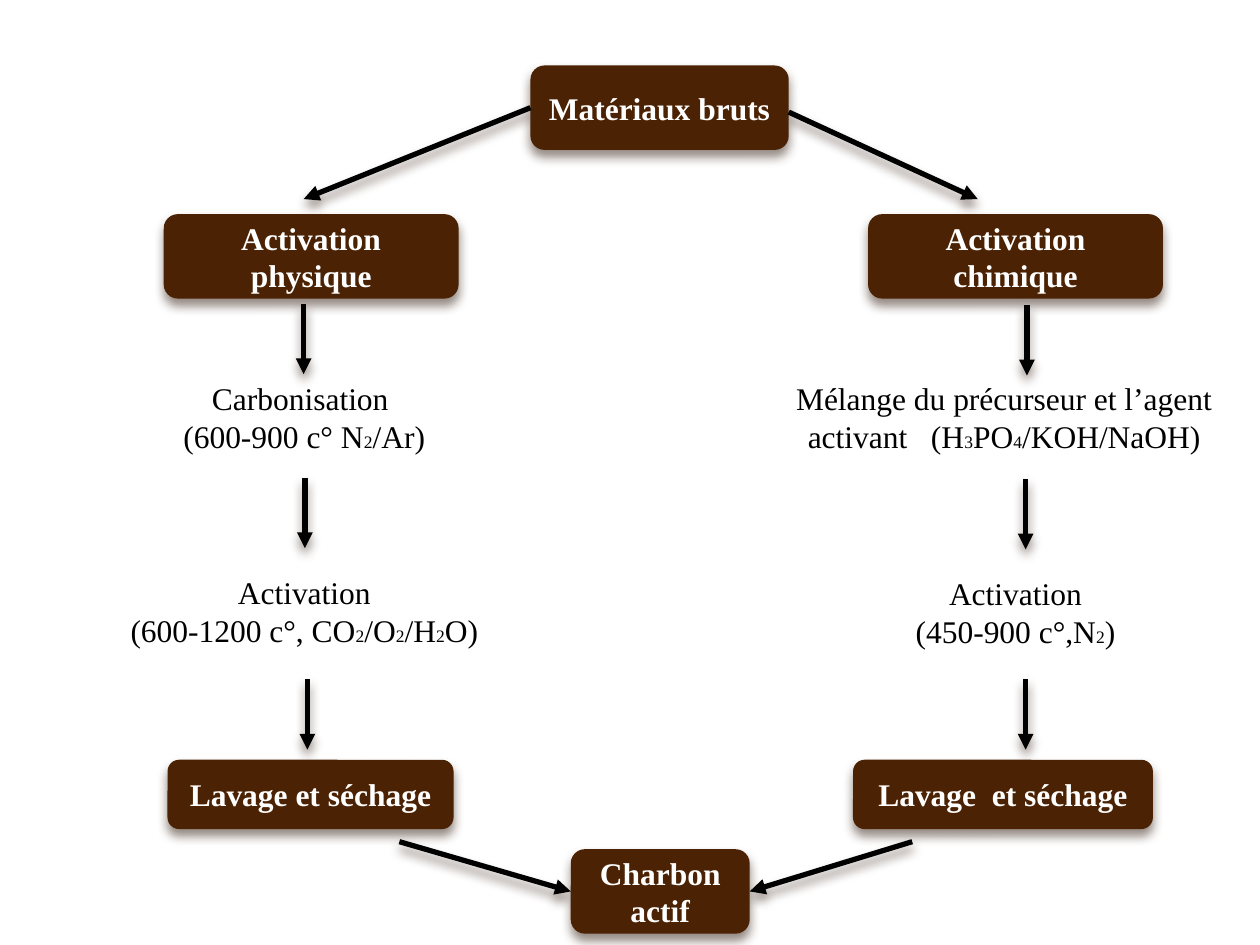
from pptx import Presentation
from pptx.dml.color import RGBColor
from pptx.enum.shapes import MSO_CONNECTOR, MSO_SHAPE
from pptx.enum.text import MSO_ANCHOR, MSO_AUTO_SIZE, PP_ALIGN
from pptx.oxml import parse_xml
from pptx.oxml.ns import nsdecls
from pptx.util import Inches, Pt

BROWN = RGBColor(0x4B, 0x22, 0x03)
SHADOW = RGBColor(0x4E, 0x3B, 0x30)
WHITE = RGBColor(0xFF, 0xFF, 0xFF)
BLACK = RGBColor(0x00, 0x00, 0x00)

BOX_HEIGHT = 0.67
WASH_HEIGHT = 0.55


class FlowChart:
    FONT = "Times New Roman"
    TEXT_SIZE = Pt(18)
    INDEX_SIZE = Pt(10)

    def __init__(self, slide):
        self.slide = slide

    def box(self, text, left, top, width, height=BOX_HEIGHT):
        shape = self.slide.shapes.add_shape(
            MSO_SHAPE.FLOWCHART_ALTERNATE_PROCESS,
            Inches(left), Inches(top), Inches(width), Inches(height))
        shape.fill.solid()
        shape.fill.fore_color.rgb = BROWN
        shape.line.fill.background()
        shape.shadow.inherit = False
        self.add_shadow(shape)
        shape.text_frame.vertical_anchor = MSO_ANCHOR.MIDDLE
        self.fill_text(shape.text_frame, [text], WHITE, bold=True)
        return shape

    def label(self, lines, left, top, width, wrap=True):
        shape = self.slide.shapes.add_textbox(
            Inches(left), Inches(top), Inches(width), Inches(0.71))
        shape.text_frame.word_wrap = wrap
        shape.text_frame.auto_size = MSO_AUTO_SIZE.SHAPE_TO_FIT_TEXT
        self.fill_text(shape.text_frame, lines, BLACK, bold=False)

    def arrow(self, start, end):
        connector = self.slide.shapes.add_connector(
            MSO_CONNECTOR.STRAIGHT, *map(Inches, start + end))
        connector.line.color.rgb = BLACK
        connector.line.width = Pt(3)
        connector.line._get_or_add_ln().append(
            parse_xml(f'<a:tailEnd {nsdecls("a")} type="triangle"/>'))
        self.add_shadow(connector)
        return connector

    def fill_text(self, frame, lines, color, bold):
        """Add one paragraph per line; "_" makes the next character small."""
        for number, line in enumerate(lines):
            paragraph = frame.add_paragraph() if number else frame.paragraphs[0]
            paragraph.alignment = PP_ALIGN.CENTER
            first, *others = line.split("_")
            pieces = [(first, self.TEXT_SIZE)]
            for part in others:
                pieces += [(part[0], self.INDEX_SIZE), (part[1:], self.TEXT_SIZE)]
            for text, size in pieces:
                run = paragraph.add_run()
                run.text = text
                style = {"name": self.FONT, "size": size, "bold": bold}
                for name, value in style.items():
                    setattr(run.font, name, value)
                run.font.color.rgb = color

    def add_shadow(self, shape):
        properties = shape._element.spPr
        for effects in properties.xpath("a:effectLst"):
            properties.remove(effects)
        properties.append(parse_xml(
            f'<a:effectLst {nsdecls("a")}>'
            f'<a:outerShdw blurRad="{Pt(6)}" dist="{Pt(4)}" dir="5400000" rotWithShape="0">'
            f'<a:srgbClr val="{SHADOW}"><a:alpha val="60000"/></a:srgbClr>'
            '</a:outerShdw></a:effectLst>'))


def main():
    presentation = Presentation()
    presentation.slide_width = Inches(10)
    presentation.slide_height = Inches(7.5)
    chart = FlowChart(presentation.slides.add_slide(presentation.slide_layouts[6]))

    raw_materials = chart.box("Matériaux bruts", 4.21, 0.52, 2.05)
    chart.box("Activation physique", 1.3, 1.7, 2.34)
    chart.box("Activation chimique", 6.89, 1.7, 2.34)
    chart.box("Lavage et séchage", 1.33, 6.03, 2.27, WASH_HEIGHT)
    chart.box("Lavage  et séchage", 6.77, 6.03, 2.38, WASH_HEIGHT)
    charcoal = chart.box("Charbon actif", 4.53, 6.74, 1.42)

    chart.label(["Carbonisation ", "(600-900 c° N_2/Ar)"], 1.28, 2.96, 2.27)
    chart.label(["Activation", "(600-1200 c°, CO_2/O_2/H_2O)"],
                0.92, 4.5, 2.99, wrap=False)
    chart.label(["Mélange du précurseur et l’agent activant   (H_3PO_4/KOH/NaOH)"],
                6.04, 2.96, 3.86)
    chart.label(["Activation", "(450-900 c°,N_2)"], 7.16, 4.51, 1.8, wrap=False)

    for x, top in [(2.41, 2.41), (2.42, 3.79), (2.44, 5.39),
                   (8.15, 2.42), (8.14, 3.8), (8.14, 5.39)]:
        chart.arrow((x, top), (x, top + 0.56))

    chart.arrow((4.21, 0.86), (2.41, 1.58)).begin_connect(raw_materials, 1)
    chart.arrow((6.26, 0.89), (7.76, 1.58))
    chart.arrow((3.17, 6.68), (4.53, 7.08)).end_connect(charcoal, 1)
    chart.arrow((7.24, 6.68), (5.95, 7.08)).end_connect(charcoal, 3)

    presentation.save("out.pptx")


if __name__ == "__main__":
    main()
